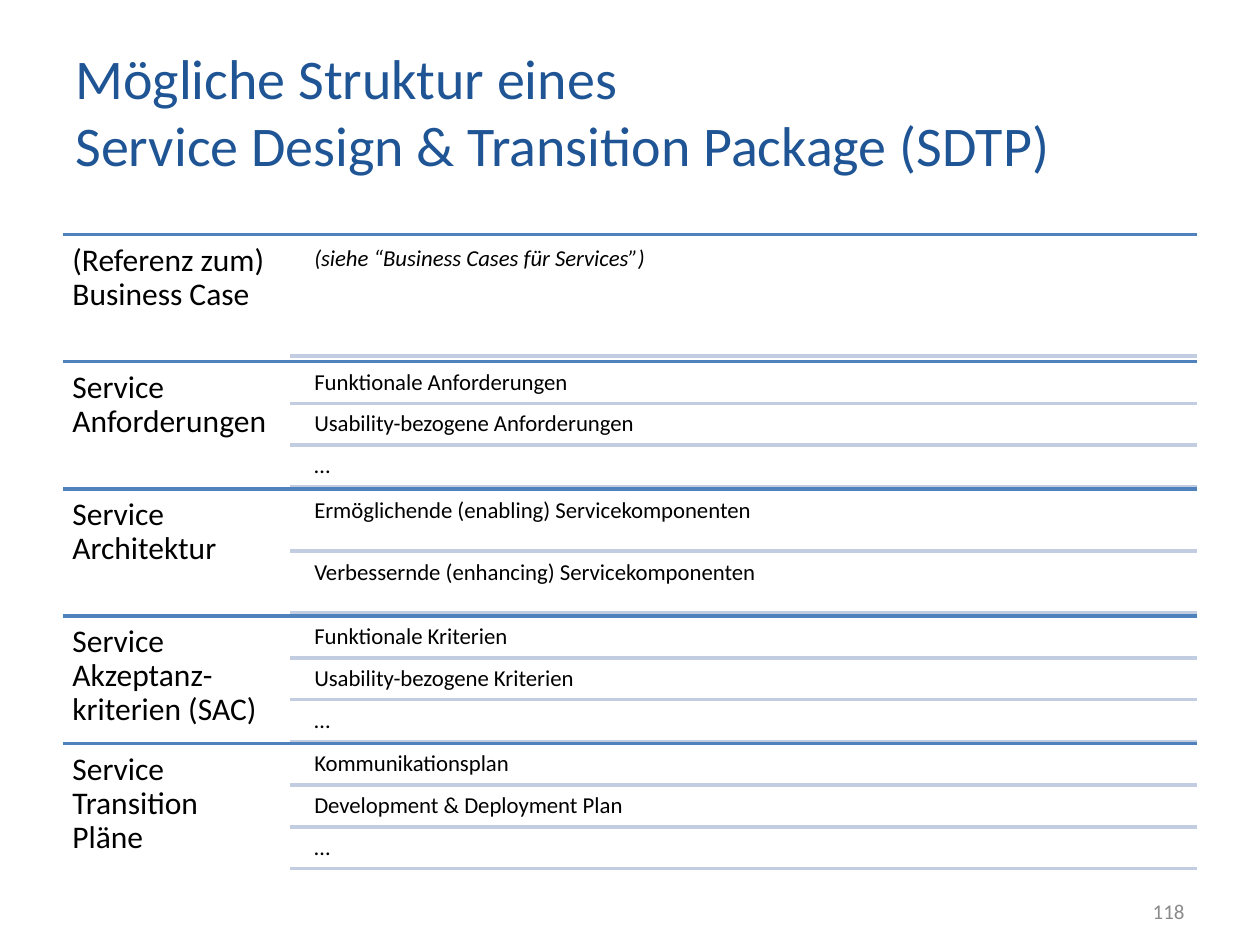
from lxml.etree import SubElement
from pptx import Presentation
from pptx.dml.color import RGBColor
from pptx.enum.shapes import MSO_CONNECTOR as Connector
from pptx.enum.text import MSO_ANCHOR as Anchor, PP_ALIGN as Align
from pptx.oxml.ns import qn
from pptx.util import Pt

TITLE_BLUE = RGBColor(0x20, 0x55, 0x95)
LINE_BLUE = RGBColor(0x4F, 0x81, 0xBD)
PALE_BLUE = RGBColor(0xC2, 0xCD, 0xE1)
BLACK = RGBColor(0, 0, 0)
GREY = RGBColor(0x8B, 0x8B, 0x8B)

# Grid in points
LEFT, RIGHT, TOP = 36, 684, 133.92
ROW_HEIGHT = 72.72
LABEL_WIDTH = 129.6
ITEM_LEFT = 175.7
GAP_SHARE = 0.05  # gap between items as a share of the item height

ROWS = [
    ("(Referenz zum) Business Case", ["(siehe “Business Cases für Services”)"]),
    ("Service Anforderungen",
     ["Funktionale Anforderungen", "Usability-bezogene Anforderungen", "…"]),
    ("Service Architektur",
     ["Ermöglichende (enabling) Servicekomponenten",
      "Verbessernde (enhancing) Servicekomponenten"]),
    ("Service Akzeptanz- kriterien (SAC)",
     ["Funktionale Kriterien", "Usability-bezogene Kriterien", "…"]),
    ("Service Transition \vPläne",
     ["Kommunikationsplan", "Development & Deployment Plan", "…"]),
]


def add_text(text, left, top, width, height, *, size, color=BLACK, italic=False,
             inset=None, spacing=None, anchor=Anchor.TOP, align=Align.LEFT):
    shape = slide.shapes.add_textbox(Pt(left), Pt(top), Pt(width), Pt(height))
    frame = shape.text_frame
    frame.word_wrap = True
    frame.vertical_anchor = anchor
    if inset is not None:
        frame.margin_left = frame.margin_right = Pt(inset)
        frame.margin_top = frame.margin_bottom = Pt(inset)
    paragraph = frame.paragraphs[0]
    paragraph.text = text
    paragraph.alignment = align
    paragraph.line_spacing = spacing
    for run in paragraph.runs:
        run.font.name = "Calibri"
        run.font.size = Pt(size)
        run.font.italic = italic
        run.font.color.rgb = color


def add_rule(left, y, color):
    connector = slide.shapes.add_connector(
        Connector.STRAIGHT, Pt(left), Pt(y), Pt(RIGHT), Pt(y))
    connector.line.color.rgb = color
    connector.line.width = Pt(2)
    SubElement(connector._element.spPr, qn("a:effectLst"))


presentation = Presentation()
presentation.slide_width, presentation.slide_height = Pt(720), Pt(540)
slide = presentation.slides.add_slide(presentation.slide_layouts[6])

# Title
add_text("Mögliche Struktur eines \vService Design & Transition Package (SDTP)",
         36, 21.6, 579, 82.8, size=32, color=TITLE_BLUE, anchor=Anchor.MIDDLE)

# Rows: a label on the left, its items on the right
for row, (label, items) in enumerate(ROWS):
    row_top = TOP + row * ROW_HEIGHT
    add_rule(LEFT, row_top, LINE_BLUE)
    add_text(label, LEFT, row_top, LABEL_WIDTH, ROW_HEIGHT,
             size=18, inset=5.4, spacing=0.9)

    count = len(items)
    item_height = ROW_HEIGHT / (count + (count + 1) * GAP_SHARE)
    gap = item_height * GAP_SHARE
    for index, item in enumerate(items):
        item_top = row_top + gap + index * (item_height + gap)
        add_text(item, ITEM_LEFT, item_top, RIGHT - ITEM_LEFT, item_height,
                 size=13, italic=row == 0, inset=3.9, spacing=0.9)
        add_rule(LEFT + LABEL_WIDTH, item_top + item_height, PALE_BLUE)

# Page number
add_text("118", 516, 506.2, 168, 28.8, size=12, color=GREY,
         anchor=Anchor.MIDDLE, align=Align.RIGHT)

presentation.save("out.pptx")
